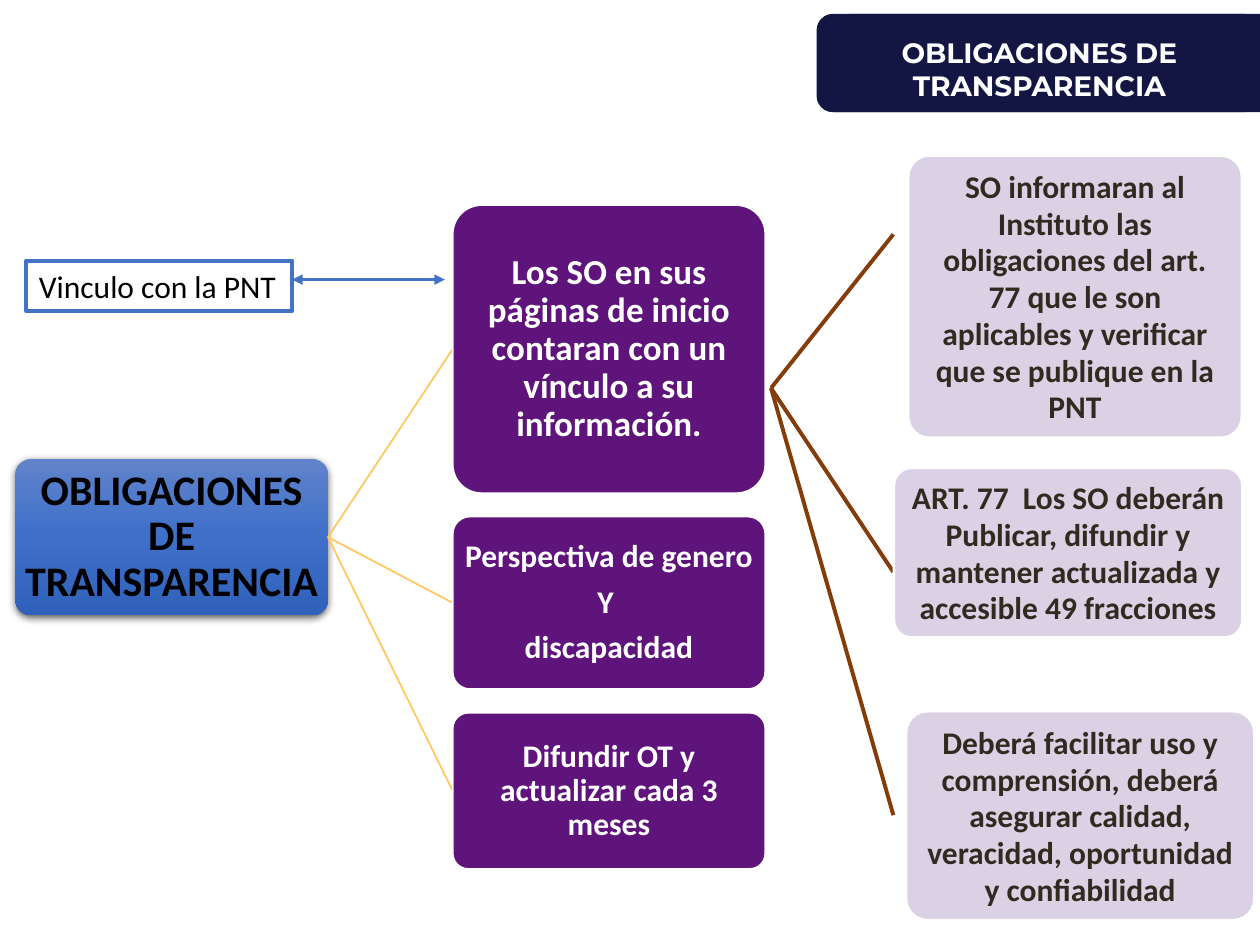
from copy import deepcopy

from pptx import Presentation
from pptx import util as u
from pptx.dml.color import RGBColor
from pptx.enum import shapes, text
from pptx.oxml import parse_xml
from pptx.oxml.ns import nsdecls, qn

PURPLE, LILAC, NAVY, BLUE = "5F147C", "DAD2E4", "131642", "4472C4"
YELLOW, BROWN, WHITE, BLACK, DARK = "FFC75E", "843C0B", "FFFFFF", "000000", "2F2B20"

ROOT = ((8.8, 262.3, 178.6, 89.3), ["OBLIGACIONES DE TRANSPARENCIA"])
BRANCH_LEFT, BRANCH_WIDTH = 258.7, 178.6
BRANCHES = [
    (117.2, 164.6, 20, ["Los SO en sus páginas de inicio contaran con un vínculo a su información."]),
    (295.2, 98.6, 18, ["Perspectiva de genero", "Y ", "discapacidad"]),
    (407.3, 89.3, 18, ["Difundir OT y actualizar cada 3 meses"]),
]
DUTIES = [
    ((518.9, 88.9, 190.8, 161.3), 0.075, 133.9,
     ["SO informaran al Instituto las obligaciones del art. 77 que le son "
      "aplicables y verificar que se publique en la PNT"]),
    ((510.8, 267.4, 199.2, 96.9), 0.103, 326.9,
     ["ART. 77  Los SO deberán",
      "Publicar, difundir y mantener actualizada y accesible 49 fracciones"]),
    ((517.7, 406.4, 199.2, 119.5), 0.103, 465.8,
     ["Deberá facilitar uso y comprensión, deberá asegurar calidad, veracidad, "
      "oportunidad y confiabilidad"]),
]
DUTY_ORIGIN, DUTY_LINE_END = (440.6, 221.8), 510.5
TITLE = ((476.6, 16.6, 234.7, 46.1), ["OBLIGACIONES DE TRANSPARENCIA"])
TITLE_BANDS = [
    (shapes.MSO_SHAPE.ROUND_1_RECTANGLE, (476.6, 7.9, 243.4, 56.2)),
    (shapes.MSO_SHAPE.ROUNDED_RECTANGLE, (466.6, 7.9, 253.4, 56.2)),
]
LINK = ((15.1, 148.9, 151.9, 29), ["Vinculo con la PNT"])
LINK_ARROW = (167, 159.8), (254.2, 159.8)

presentation = Presentation()
presentation.slide_width, presentation.slide_height = u.Pt(720), u.Pt(540)
slide = presentation.slides.add_slide(presentation.slide_layouts[6])


def color(value):
    return RGBColor.from_string(value)


def add_line(start, end, line_color, width, arrows=False):
    line = slide.shapes.add_connector(
        shapes.MSO_CONNECTOR.STRAIGHT, *[u.Pt(value) for value in (*start, *end)])
    line.line.color.rgb = color(line_color)
    line.line.width = u.Pt(width)
    if arrows:
        for end_name in ("headEnd", "tailEnd"):
            line.line._get_or_add_ln().append(
                parse_xml(f'<a:{end_name} {nsdecls("a")} type="triangle"/>'))
    line._element.spPr.append(parse_xml(f'<a:effectLst {nsdecls("a")}/>'))


def add_box(kind, place, fill, line_color=None, width=1, corner=None):
    shape = slide.shapes.add_shape(kind, *[u.Pt(value) for value in place])
    shape.shadow.inherit = False
    shape.fill.solid()
    shape.fill.fore_color.rgb = color(fill)
    if line_color:
        shape.line.color.rgb = color(line_color)
        shape.line.width = u.Pt(width)
    else:
        shape.line.fill.background()
    if corner:
        shape.adjustments[0] = corner
    return shape


def write(shape, lines, size, font_color, font="Calibri", bold=True, spacing=None,
          after=0, inset=None, anchor=text.MSO_ANCHOR.MIDDLE,
          align=text.PP_ALIGN.CENTER, wrap=True):
    frame = shape.text_frame
    frame.text = "\n".join(lines)
    frame.word_wrap = wrap
    frame.vertical_anchor = anchor
    if inset is not None:
        frame.margin_left = frame.margin_right = u.Pt(inset)
        frame.margin_top = frame.margin_bottom = u.Pt(inset)
    for paragraph in frame.paragraphs:
        paragraph.alignment = align
        paragraph.space_after = u.Pt(after)
        if spacing:
            paragraph.line_spacing = spacing
        for run in paragraph.runs:
            run.font.name, run.font.size, run.font.bold = font, u.Pt(size), bold
            run.font.color.rgb = color(font_color)


def add_gradient_and_shadow(shape):
    shape.fill.gradient()
    shape.fill.gradient_angle = 270
    stops = shape.fill.gradient_stops
    for stop, value, position in zip(stops, ("6183CB", "3062BB"), (0, 1)):
        stop.color.rgb, stop.position = color(value), position
    stop_list = shape._element.spPr.find(qn("a:gradFill")).find(qn("a:gsLst"))
    stop_list.insert(1, deepcopy(stop_list[0]))
    middle = shape.fill.gradient_stops[1]
    middle.color.rgb, middle.position = color("3E70CA"), 0.5
    shape._element.spPr.find(qn("a:effectLst")).append(parse_xml(
        f'<a:outerShdw {nsdecls("a")} blurRad="57150" dist="19050" dir="5400000" '
        'algn="ctr" rotWithShape="0"><a:srgbClr val="000000">'
        '<a:alpha val="63000"/></a:srgbClr></a:outerShdw>'))


ROUNDED = shapes.MSO_SHAPE.ROUNDED_RECTANGLE

place, lines = ROOT
root = add_box(ROUNDED, place, "3E70CA", corner=0.1)
add_gradient_and_shadow(root)
write(root, lines, 24, BLACK, spacing=0.9, after=8.4, inset=1.2)
root_exit = (place[0] + place[2], place[1] + place[3] / 2)

for top, height, size, lines in BRANCHES:
    add_line(root_exit, (BRANCH_LEFT, top + height / 2), YELLOW, 1)
    branch = add_box(ROUNDED, (BRANCH_LEFT, top, BRANCH_WIDTH, height), PURPLE, WHITE, 1, 0.1)
    write(branch, lines, size, WHITE, spacing=0.9, after=0.35 * size, inset=0.9)

for place, corner, line_end, lines in DUTIES:
    add_line(DUTY_ORIGIN, (DUTY_LINE_END, line_end), BROWN, 2.25)
    duty = add_box(ROUNDED, place, LILAC, WHITE, 1.5, corner)
    write(duty, lines, 18, DARK, spacing=u.Pt(21))

for kind, place in TITLE_BANDS:
    band = add_box(kind, place, NAVY)
    if kind == shapes.MSO_SHAPE.ROUND_1_RECTANGLE:
        band._element.spPr.xfrm.set("flipH", "1")

place, lines = TITLE
title = slide.shapes.add_textbox(*[u.Pt(value) for value in place])
write(title, lines, 16, WHITE, font="Montserrat", anchor=text.MSO_ANCHOR.TOP)

add_line(*LINK_ARROW, BLUE, 1.5, arrows=True)
place, lines = LINK
link = add_box(shapes.MSO_SHAPE.RECTANGLE, place, WHITE, BLUE, 2.25)
write(link, lines, 18, BLACK, bold=False, anchor=text.MSO_ANCHOR.TOP,
      align=text.PP_ALIGN.LEFT, wrap=False)

presentation.save("out.pptx")
